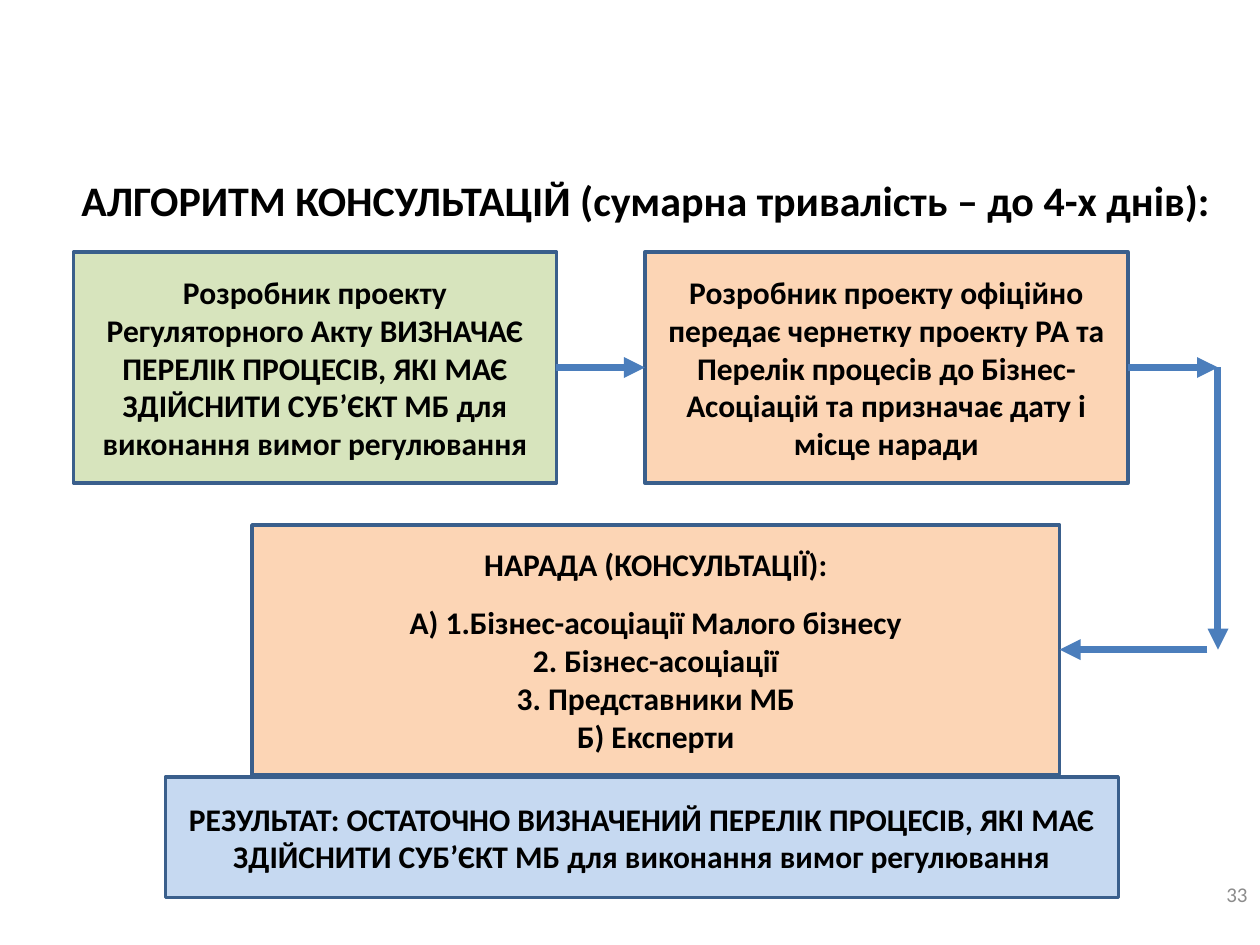
from pptx import Presentation
from pptx.dml.color import RGBColor
from pptx.enum.shapes import MSO_CONNECTOR as Link, MSO_SHAPE as Shape
from pptx.enum.text import MSO_ANCHOR as Anchor, PP_ALIGN as Align
from pptx.oxml.ns import qn
from pptx.util import Pt
from lxml.etree import SubElement

BLACK = RGBColor(0x00, 0x00, 0x00)
GREY = RGBColor(0x8C, 0x8C, 0x8C)
GREEN = RGBColor(0xD7, 0xE4, 0xBD)
PEACH = RGBColor(0xFC, 0xD5, 0xB5)
PALE = RGBColor(0xC6, 0xD9, 0xF1)
EDGE = RGBColor(0x3A, 0x5F, 0x8C)
BLUE = RGBColor(0x4B, 0x7E, 0xBC)

# Content
TITLE = "АЛГОРИТМ КОНСУЛЬТАЦІЙ (сумарна тривалість – до 4-х днів):"
NUMBER = "33"
DRAFT = ["Розробник проекту Регуляторного Акту ВИЗНАЧАЄ ПЕРЕЛІК ПРОЦЕСІВ, "
         "ЯКІ МАЄ ЗДІЙСНИТИ СУБ’ЄКТ МБ для виконання вимог регулювання"]
SEND = ["Розробник проекту офіційно передає чернетку проекту РА та Перелік "
        "процесів до Бізнес-Асоціацій та призначає дату і місце наради"]
MEET = ["НАРАДА (КОНСУЛЬТАЦІЇ):",
        "А) 1.Бізнес-асоціації Малого бізнесу",
        "2. Бізнес-асоціації",
        "3. Представники МБ",
        "Б) Експерти"]
RESULT = ["РЕЗУЛЬТАТ: ОСТАТОЧНО ВИЗНАЧЕНИЙ ПЕРЕЛІК ПРОЦЕСІВ, ЯКІ МАЄ "
          "ЗДІЙСНИТИ СУБ’ЄКТ МБ для виконання вимог регулювання"]

# Layout: left, top, width, height
STEP_W, STEP_H, TOP = 276, 132, 144
LEFT, NEXT = 42, 368.5
MEET_AT = (144, 300, 461.5, 142.5)
STEPS = [
    (DRAFT, (LEFT, TOP, STEP_W, STEP_H), GREEN),
    (SEND, (NEXT, TOP, STEP_W, STEP_H), PEACH),
    (MEET, MEET_AT, PEACH),
    (RESULT, (94.5, 444, 544.5, 69), PALE),
]
MID = TOP + STEP_H / 2
LOW = MEET_AT[1] + MEET_AT[3] / 2
TURN = 696
ARROWS = [
    (LEFT + STEP_W, MID, NEXT, MID),
    (NEXT + STEP_W, MID, TURN, MID),
    (TURN, MID, TURN, LOW),
    (TURN - 6, LOW, MEET_AT[0] + MEET_AT[2], LOW),
]


def write(shape, lines, size=18, color=BLACK, bold=True,
          align=Align.CENTER, anchor=Anchor.MIDDLE, gap=0):
    """Fill a shape with paragraphs; gap follows the first one."""
    frame = shape.text_frame
    frame.word_wrap = True
    frame.vertical_anchor = anchor
    for i, line in enumerate(lines):
        par = frame.add_paragraph() if i else frame.paragraphs[0]
        par.alignment = align
        if gap and i == 0:
            par.space_after = Pt(gap)
        run = par.add_run()
        run.text = line
        font = run.font
        font.name, font.size, font.bold = "Calibri", Pt(size), bold
        font.color.rgb = color


def step(shapes, lines, box, fill):
    shape = shapes.add_shape(Shape.FLOWCHART_PROCESS, *map(Pt, box))
    shape.shadow.inherit = False
    shape.fill.solid()
    shape.fill.fore_color.rgb = fill
    shape.line.color.rgb = EDGE
    shape.line.width = Pt(2)
    write(shape, lines, gap=12 if len(lines) > 1 else 0)


def arrow(shapes, ends):
    link = shapes.add_connector(Link.STRAIGHT, *map(Pt, ends))
    link.line.color.rgb = BLUE
    link.line.width = Pt(4)
    SubElement(link.line._get_or_add_ln(), qn("a:tailEnd"), type="triangle")
    SubElement(link._element.spPr, qn("a:effectLst"))


def main():
    deck = Presentation()
    deck.slide_width, deck.slide_height = Pt(720), Pt(540)
    shapes = deck.slides.add_slide(deck.slide_layouts[6]).shapes

    # Page number and heading
    page = shapes.add_textbox(Pt(552), Pt(492), Pt(168), Pt(37.5))
    write(page, [NUMBER], size=12, color=GREY, bold=False, align=Align.RIGHT)
    head = shapes.add_textbox(Pt(30), Pt(96), Pt(678), Pt(36))
    write(head, [TITLE], size=24, anchor=Anchor.TOP)

    # Steps and the arrows between them
    for lines, box, fill in STEPS:
        step(shapes, lines, box, fill)
    for ends in ARROWS:
        arrow(shapes, ends)

    deck.save("out.pptx")


if __name__ == "__main__":
    main()
